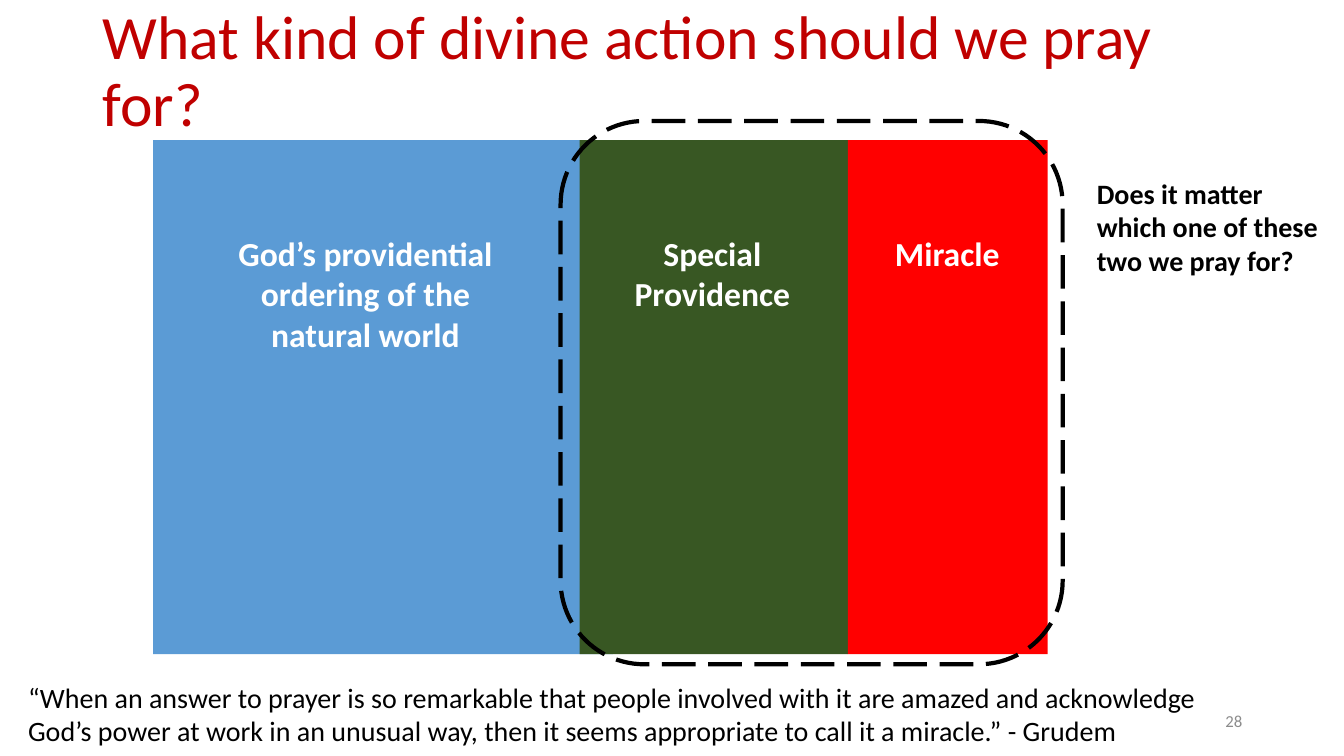
from dataclasses import dataclass

from pptx import Presentation
from pptx.dml.color import RGBColor
from pptx.enum import dml, shapes, text
from pptx.util import Inches, Pt


@dataclass(frozen=True)
class Theme:
    font: str = "Calibri"
    heading: str = "C00000"
    ordering: str = "5B9BD5"
    providence: str = "385723"
    miracle: str = "FF0000"
    light: str = "FFFFFF"
    dark: str = "000000"
    muted: str = "8C8C8C"
    title_size: int = 44
    label_size: int = 24
    body_size: int = 20
    number_size: int = 12


def write(frame, words, size, color, font, bold=False,
          align=text.PP_ALIGN.LEFT, anchor=text.MSO_ANCHOR.TOP, spacing=1.0):
    frame.word_wrap = True
    frame.vertical_anchor = anchor
    para = frame.paragraphs[0]
    para.alignment = align
    para.line_spacing = spacing
    span = para.add_run()
    span.text = words
    span.font.name = font
    span.font.size = Pt(size)
    span.font.bold = bold
    span.font.color.rgb = RGBColor.from_string(color)


class SlideBuilder:
    def __init__(self, page, theme):
        self.page = page
        self.theme = theme

    def label(self, bounds, words, size, color, **options):
        box = self.page.shapes.add_textbox(*map(Inches, bounds))
        write(box.text_frame, words, size, color, self.theme.font, **options)

    def panel(self, bounds, color):
        box = self.page.shapes.add_shape(
            shapes.MSO_SHAPE.RECTANGLE, *map(Inches, bounds))
        box.shadow.inherit = False
        box.fill.solid()
        box.fill.fore_color.rgb = RGBColor.from_string(color)
        box.line.fill.background()

    def dashed_frame(self, bounds):
        box = self.page.shapes.add_shape(
            shapes.MSO_SHAPE.ROUNDED_RECTANGLE, *map(Inches, bounds))
        box.shadow.inherit = False
        box.fill.background()
        box.line.color.rgb = RGBColor.from_string(self.theme.dark)
        box.line.width = Pt(3)
        box.line.dash_style = dml.MSO_LINE.LONG_DASH


def main():
    theme = Theme()
    deck = Presentation()
    deck.slide_width = Inches(13.33)
    deck.slide_height = Inches(7.5)
    page = deck.slides.add_slide(deck.slide_layouts[6])
    builder = SlideBuilder(page, theme)

    builder.label((0.92, 0, 11.71, 1.45),
                  "What kind of divine action should we pray for?",
                  theme.title_size, theme.heading,
                  anchor=text.MSO_ANCHOR.MIDDLE, spacing=0.9)

    panel_top, panel_height = 1.39, 5.1
    for left, width, color in (
        (1.52, 4.56, theme.ordering),
        (5.75, 2.66, theme.providence),
        (8.41, 1.98, theme.miracle),
    ):
        builder.panel((left, panel_top, width, panel_height), color)

    label_top = 2.26
    for left, width, height, words in (
        (2.25, 2.75, 1.31, "God’s providential ordering of the natural world"),
        (5.72, 2.69, 0.91, "Special Providence"),
        (8.05, 2.69, 0.5, "Miracle"),
    ):
        builder.label((left, label_top, width, height), words,
                      theme.label_size, theme.light, bold=True,
                      align=text.PP_ALIGN.CENTER)

    builder.label((9.42, 6.95, 3, 0.4), "28", theme.number_size, theme.muted,
                  align=text.PP_ALIGN.RIGHT, anchor=text.MSO_ANCHOR.MIDDLE)
    builder.dashed_frame((5.56, 1.2, 4.98, 5.39))
    builder.label((10.78, 1.7, 2.56, 1.11),
                  "Does it matter which one of these two we pray for?",
                  theme.body_size, theme.dark, bold=True)
    builder.label((0.18, 6.7, 11.79, 0.77),
                  "“When an answer to prayer is so remarkable that people "
                  "involved with it are amazed and acknowledge God’s power at "
                  "work in an unusual way, then it seems appropriate to call "
                  "it a miracle.” - Grudem",
                  theme.body_size, theme.dark)

    deck.save("out.pptx")


if __name__ == "__main__":
    main()
